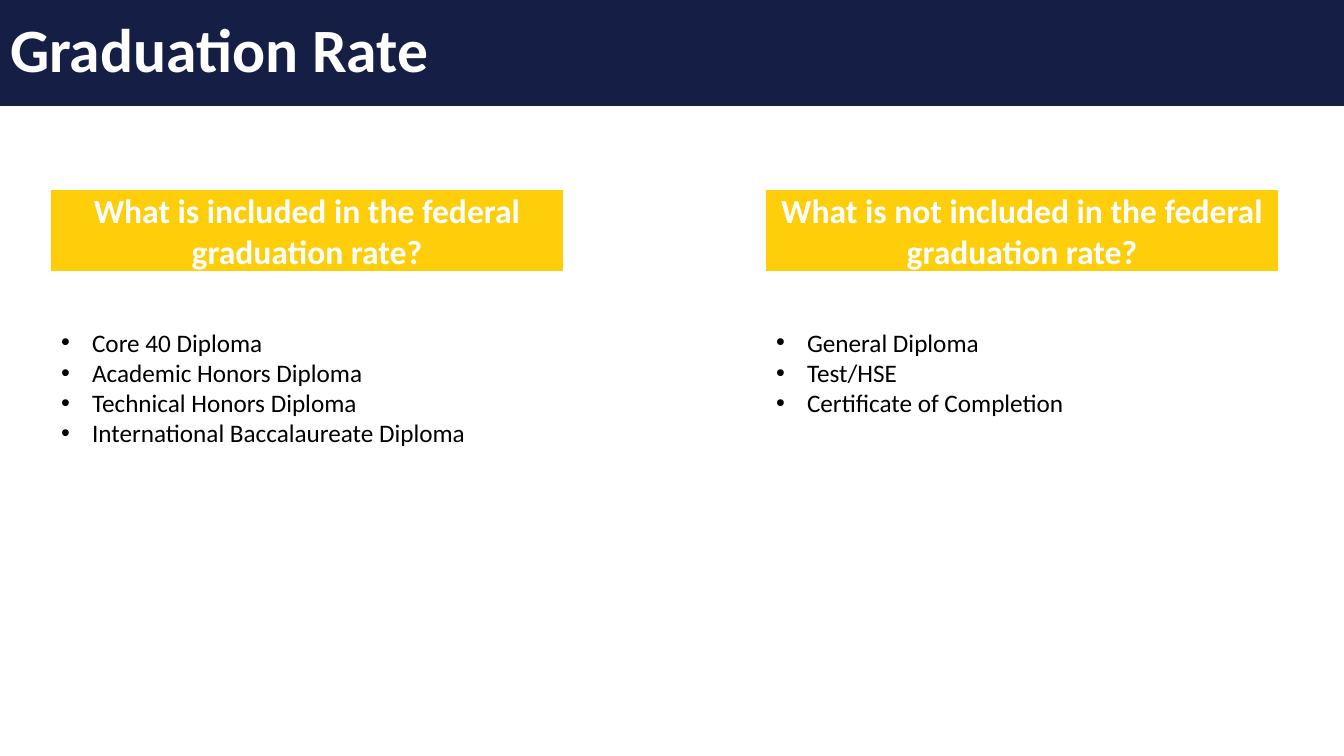
import pptx
import pptx.util
import pptx.dml.color
import pptx.enum.text

NAVY = pptx.dml.color.RGBColor(0x15, 0x1F, 0x46)
GOLD = pptx.dml.color.RGBColor(0xFD, 0xCE, 0x09)
WHITE = pptx.dml.color.RGBColor(0xFF, 0xFF, 0xFF)
BLACK = pptx.dml.color.RGBColor(0x00, 0x00, 0x00)

HEADLINE = "Graduation Rate"
COLUMNS = [
    ("What is included in the federal graduation rate?",
     ["Core 40 Diploma", "Academic Honors Diploma",
      "Technical Honors Diploma", "International Baccalaureate Diploma"]),
    ("What is not included in the federal graduation rate?",
     ["General Diploma", "Test/HSE", "Certificate of Completion"]),
]

SLIDE_WIDTH, SLIDE_HEIGHT = 1344, 756
BANNER_HEIGHT = 106
COLUMN_LEFT, COLUMN_STEP, COLUMN_WIDTH = 51, 715, 512
QUESTION_TOP, QUESTION_HEIGHT = 190, 81
ANSWERS_TOP, ANSWER_HEIGHT, ANSWERS_PADDING = 322, 30, 10
BULLET_INDENT = 31


def emu(px):
    return pptx.util.Inches(px / 100.8)


def fill_text(holder, lines, box, size, color, bold, align, anchor):
    holder.left, holder.top, holder.width, holder.height = map(emu, box)
    frame = holder.text_frame
    frame.text = "\n".join(lines)
    frame.word_wrap = True
    frame.auto_size = pptx.enum.text.MSO_AUTO_SIZE.NONE
    frame.vertical_anchor = anchor
    for paragraph in frame.paragraphs:
        paragraph.alignment = align
        paragraph.space_before = pptx.util.Pt(0)
        for run in paragraph.runs:
            run.font.name = "Calibri"
            run.font.size = pptx.util.Pt(size)
            run.font.bold = bold
            run.font.color.rgb = color


def paint(holder, color):
    holder.fill.solid()
    holder.fill.fore_color.rgb = color


def main():
    align = pptx.enum.text.PP_ALIGN
    anchor = pptx.enum.text.MSO_ANCHOR
    deck = pptx.Presentation()
    deck.slide_width, deck.slide_height = emu(SLIDE_WIDTH), emu(SLIDE_HEIGHT)
    slide = deck.slides.add_slide(deck.slide_layouts.get_by_name("Comparison"))
    banner, *column_holders = slide.placeholders

    fill_text(banner, [HEADLINE], (0, 0, SLIDE_WIDTH, BANNER_HEIGHT),
              44, WHITE, True, align.LEFT, anchor.MIDDLE)
    banner.text_frame.paragraphs[0].line_spacing = 0.9
    paint(banner, NAVY)

    for index, (question, answers) in enumerate(COLUMNS):
        question_holder, answers_holder = column_holders[2 * index:2 * index + 2]
        left = COLUMN_LEFT + index * COLUMN_STEP
        fill_text(question_holder, [question],
                  (left, QUESTION_TOP, COLUMN_WIDTH, QUESTION_HEIGHT),
                  24, WHITE, True, align.CENTER, anchor.MIDDLE)
        paint(question_holder, GOLD)

        answers_height = len(answers) * ANSWER_HEIGHT + ANSWERS_PADDING
        fill_text(answers_holder, answers,
                  (left, ANSWERS_TOP, COLUMN_WIDTH, answers_height),
                  18, BLACK, False, align.LEFT, anchor.TOP)
        for paragraph in answers_holder.text_frame.paragraphs:
            properties = paragraph._p.get_or_add_pPr()
            properties.set("marL", str(emu(BULLET_INDENT)))
            properties.set("indent", str(-emu(BULLET_INDENT)))

    deck.save("out.pptx")


if __name__ == "__main__":
    main()
